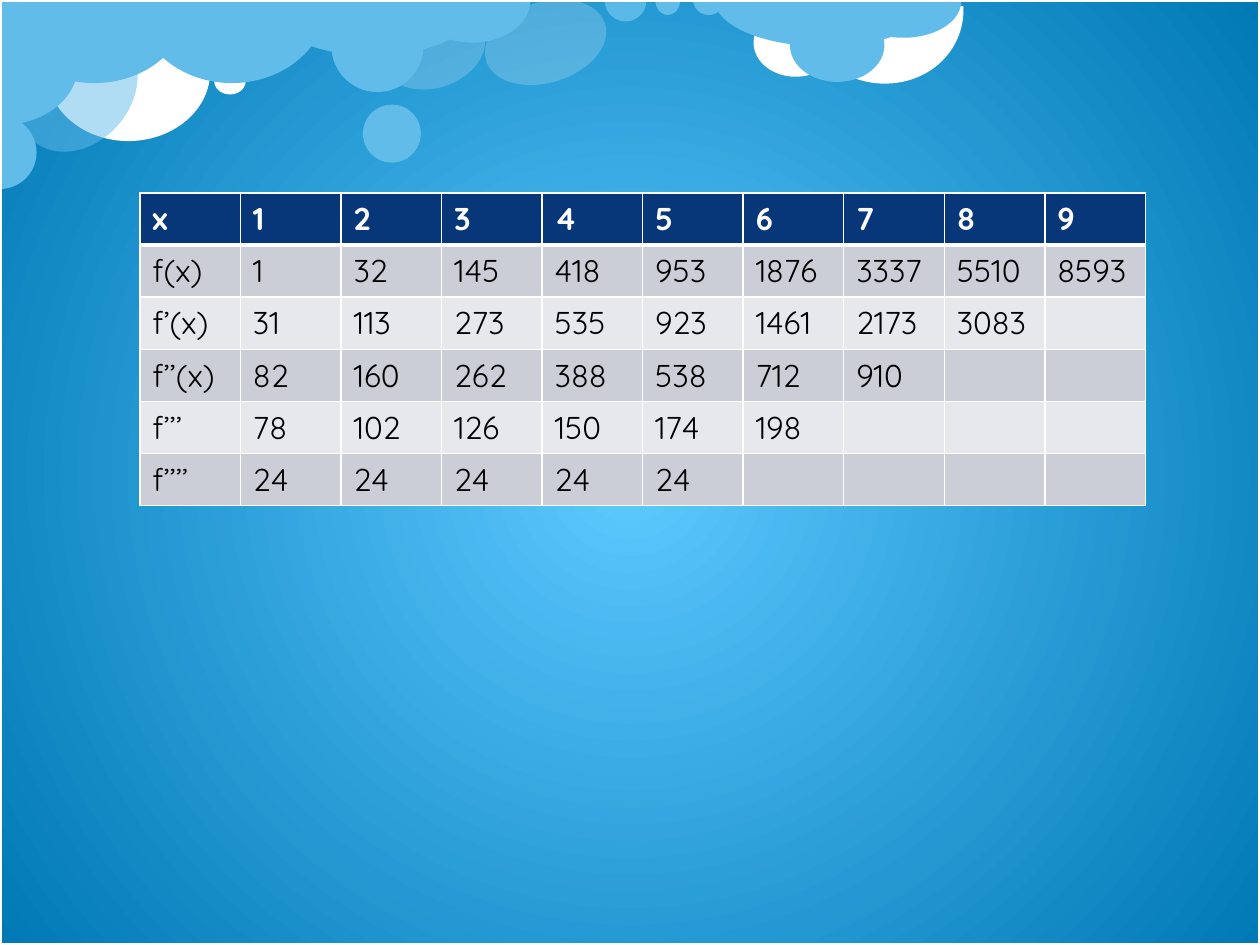
from dataclasses import dataclass

from lxml.etree import SubElement
from pptx import Presentation
from pptx.dml.color import RGBColor
from pptx.enum.shapes import MSO_SHAPE as Shape
from pptx.oxml.ns import qn
from pptx.slide import Slide
from pptx.util import Pt

WIDTH, HEIGHT = 720, 540
FONT = "Quicksand"
WHITE, SKY, PALE_SKY = "FFFFFF", "62BCE9", "8FD9FB"
HEADER_FILL, BANDS = "073779", ("CCCED7", "E7E8EC")
HALF_DISC = (0, 108)  # from 0 to 180 degrees: the lower half
CAP = (151.8, 44.48)

ROWS = [
    ["x", "1", "2", "3", "4", "5", "6", "7", "8", "9"],
    ["f(x)", "1", "32", "145", "418", "953", "1876", "3337", "5510", "8593"],
    ["f’(x)", "31", "113", "273", "535", "923", "1461", "2173", "3083"],
    ["f’’(x)", "82", "160", "262", "388", "538", "712", "910"],
    ["f’’’", "78", "102", "126", "150", "174", "198"],
    ["f’’’’", "24", "24", "24", "24", "24"],
]


@dataclass
class Puff:
    """One rounded piece of the clouds; lengths in points."""
    kind: Shape
    left: float
    top: float
    width: float
    height: float
    fill: str = SKY
    opacity: int = 100
    rotation: float = 0


PUFFS = [
    Puff(Shape.OVAL, 223.9, -3.6, 46.1, 61.9, WHITE, 20, 72.8),
    Puff(Shape.OVAL, 26.6, 0.7, 93.6, 79.9, WHITE),
    Puff(Shape.ARC, 460.1, -43.2, 87.1, 94.3, WHITE, rotation=106.5),
    Puff(Shape.OVAL, 430.6, 5, 48.2, 38.9, WHITE),
    Puff(Shape.PIE, -0.7, -47.5, 109.4, 95),
    Puff(Shape.PIE, 149.8, -31.7, 126, 63.4),
    Puff(Shape.OVAL, 207.4, 59.8, 33.1, 33.1),
    Puff(Shape.OVAL, 13.7, 13, 61.2, 77, SKY, 50, 41.8),
    Puff(Shape.PIE, -20.9, 66.2, 41.8, 41.8, rotation=270),
    Puff(Shape.OVAL, 122.4, 38.9, 18, 15.1, WHITE),
    Puff(Shape.PIE, 77.8, -47.5, 109.4, 95),
    Puff(Shape.PIE, 408.2, -27.4, 126, 54),
    Puff(Shape.OVAL, 451.4, 5, 54, 41.8),
    Puff(Shape.PIE, 483.1, -20.2, 66.2, 41.8),
    Puff(Shape.OVAL, 288.7, -11.5, 46.1, 71.3, WHITE, 20, 72.8),
    Puff(Shape.PIE, 345.6, -11.5, 23.8, 23.8, PALE_SKY, 50),
    Puff(Shape.PIE, 374.4, -9.4, 14.4, 18),
    Puff(Shape.PIE, 396, -9.4, 18, 18),
    Puff(Shape.OVAL, 189.4, 0, 52.6, 52.6),
    Puff(Shape.PIE, 236.9, -23.8, 66.2, 48.2),
    Puff(Shape.PIE, -33.8, -6.5, 67, 89.3, rotation=270),
]


def color(hex_value: str) -> RGBColor:
    return RGBColor.from_string(hex_value)


def set_background(slide: Slide, center: str, edge: str) -> None:
    fill = slide.background.fill
    fill.gradient()
    for stop, position, hex_value in zip(fill.gradient_stops, (0, 1), (center, edge)):
        stop.position = position
        stop.color.rgb = color(hex_value)
    gradient = slide.element.find(".//" + qn("a:gradFill"))
    gradient.remove(gradient.find(qn("a:lin")))
    circle = SubElement(gradient, qn("a:path"), path="circle")
    SubElement(circle, qn("a:fillToRect"), dict.fromkeys("ltrb", "50000"))


def draw_puff(slide: Slide, puff: Puff) -> None:
    shape = slide.shapes.add_shape(
        puff.kind, Pt(puff.left), Pt(puff.top), Pt(puff.width), Pt(puff.height))
    shape.shadow.inherit = False
    shape.rotation = puff.rotation
    shape.line.fill.background()
    shape.fill.solid()
    shape.fill.fore_color.rgb = color(puff.fill)
    if puff.opacity < 100:
        rgb = shape.element.spPr.find(".//" + qn("a:srgbClr"))
        SubElement(rgb, qn("a:alpha"), val=str(puff.opacity * 1000))
    if puff.kind != Shape.OVAL:
        angles = CAP if puff.kind == Shape.ARC else HALF_DISC
        for index, angle in enumerate(angles):
            shape.adjustments[index] = angle


def draw_frame(slide: Slide) -> None:
    frame = slide.shapes.add_shape(Shape.RECTANGLE, 0, 0, Pt(WIDTH), Pt(HEIGHT))
    frame.shadow.inherit = False
    frame.fill.background()
    frame.line.color.rgb = color(WHITE)
    frame.line.width = Pt(2)


def set_borders(cell, top: float, bottom: float) -> None:
    properties = cell._tc.get_or_add_tcPr()
    for side, width in (("L", 1), ("R", 1), ("T", top), ("B", bottom)):
        line = SubElement(properties, qn(f"a:ln{side}"), w=str(Pt(width)))
        solid = SubElement(line, qn("a:solidFill"))
        SubElement(solid, qn("a:srgbClr"), val=WHITE)


def draw_table(slide: Slide, left: float, top: float,
               column_width: float, row_height: float) -> None:
    row_count, column_count = len(ROWS), len(ROWS[0])
    table = slide.shapes.add_table(
        row_count, column_count, Pt(left), Pt(top),
        Pt(column_width * column_count), Pt(row_height * row_count)).table
    for column in table.columns:
        column.width = Pt(column_width)
    for row_index, values in enumerate(ROWS):
        table.rows[row_index].height = Pt(row_height)
        is_header = row_index == 0
        for column_index in range(column_count):
            cell = table.cell(row_index, column_index)
            set_borders(cell, 3 if row_index == 1 else 1, 3 if is_header else 1)
            cell.fill.solid()
            cell.fill.fore_color.rgb = color(
                HEADER_FILL if is_header else BANDS[(row_index - 1) % 2])
            paragraph = cell.text_frame.paragraphs[0]
            if column_index < len(values):
                paragraph.text = values[column_index]
            paragraph.font.name = FONT
            paragraph.font.size = Pt(18)
            paragraph.font.bold = is_header
            paragraph.font.color.rgb = color(WHITE if is_header else "000000")


def main() -> None:
    presentation = Presentation()
    presentation.slide_width, presentation.slide_height = Pt(WIDTH), Pt(HEIGHT)
    slide = presentation.slides.add_slide(presentation.slide_layouts[6])

    # Sky and clouds
    set_background(slide, "5DC9FF", "0079B5")
    for puff in PUFFS:
        draw_puff(slide, puff)
    draw_frame(slide)

    # Table of successive differences
    draw_table(slide, left=79.9, top=110.2, column_width=57.46, row_height=29.2)

    presentation.save("out.pptx")


if __name__ == "__main__":
    main()
